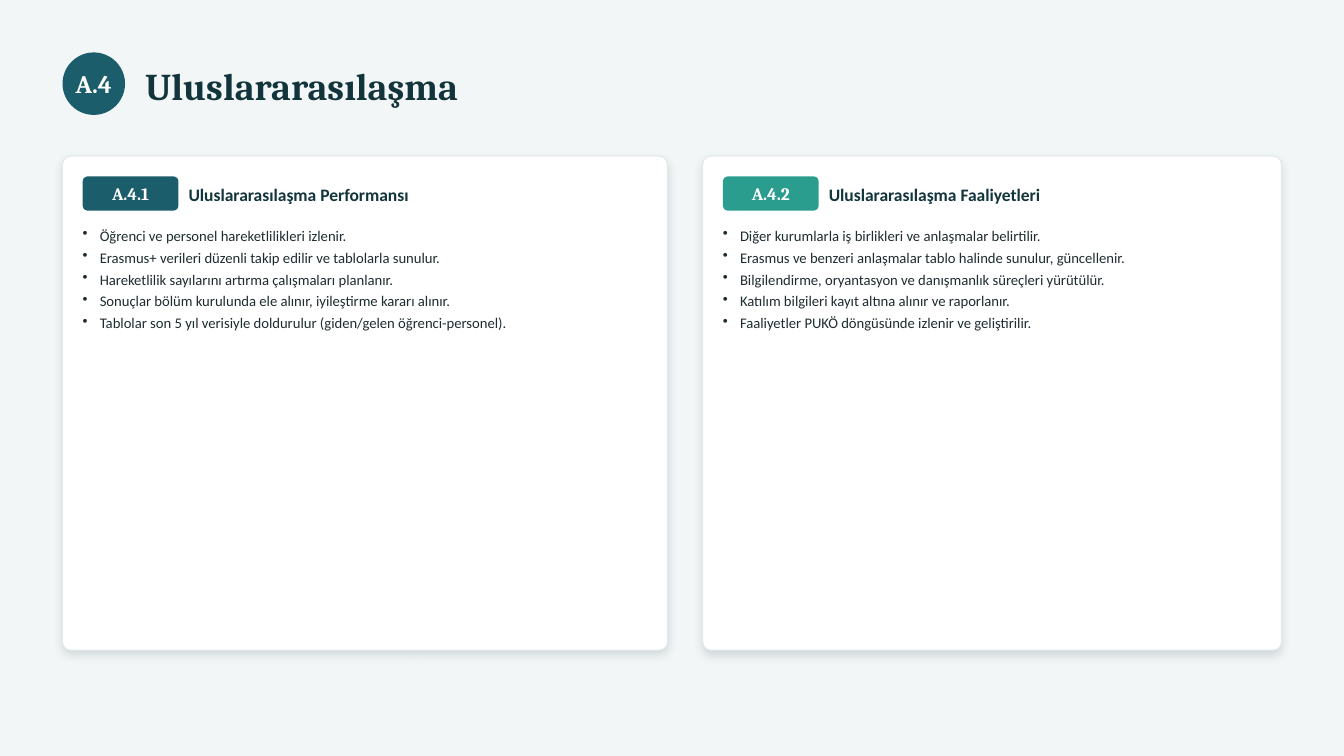
from lxml import etree
from pptx import Presentation
from pptx import util as u
from pptx.dml.color import RGBColor
from pptx.enum import shapes, text
from pptx.oxml.ns import qn

WIDE, HIGH = 13.33, 7.5
EDGE, GAP, PAD = 0.62, 0.35, 0.2
TEAL, MINT, DARK, INK = "1C5D6B", "2A9D8F", "12343B", "1F2C30"
SERIF, SANS = "Cambria", "Calibri"
FORM = shapes.MSO_SHAPE

CARDS = [
    (6, TEAL, "A.4.1", "Uluslararasılaşma Performansı", [
        "Öğrenci ve personel hareketlilikleri izlenir.",
        "Erasmus+ verileri düzenli takip edilir ve tablolarla sunulur.",
        "Hareketlilik sayılarını artırma çalışmaları planlanır.",
        "Sonuçlar bölüm kurulunda ele alınır, iyileştirme kararı alınır.",
        "Tablolar son 5 yıl verisiyle doldurulur (giden/gelen öğrenci-personel).",
    ]),
    (5.74, MINT, "A.4.2", "Uluslararasılaşma Faaliyetleri", [
        "Diğer kurumlarla iş birlikleri ve anlaşmalar belirtilir.",
        "Erasmus ve benzeri anlaşmalar tablo halinde sunulur, güncellenir.",
        "Bilgilendirme, oryantasyon ve danışmanlık süreçleri yürütülür.",
        "Katılım bilgileri kayıt altına alınır ve raporlanır.",
        "Faaliyetler PUKÖ döngüsünde izlenir ve geliştirilir.",
    ]),
]


def paint(fill, tone):
    fill.solid()
    fill.fore_color.rgb = RGBColor.from_string(tone)


def inches(box):
    return [u.Inches(side) for side in box]


def add_form(slide, kind, box, tone, curve=None):
    form = slide.shapes.add_shape(kind, *inches(box))
    form.shadow.inherit = False
    paint(form.fill, tone)
    form.line.fill.background()
    if curve is not None:
        form.adjustments[0] = curve
    return form


def add_shade(form):
    effects = form._element.spPr.find(qn("a:effectLst"))
    shade = etree.SubElement(
        effects, qn("a:outerShdw"), blurRad=str(u.Pt(7)), dist=str(u.Pt(3)),
        dir="5400000", algn="ctr", rotWithShape="0")
    tone = etree.SubElement(shade, qn("a:srgbClr"), val="0C2A30")
    etree.SubElement(tone, qn("a:alpha"), val="14000")


def set_frame(form, wrap=True, anchor=text.MSO_ANCHOR.MIDDLE):
    frame = form.text_frame
    frame.margin_left = frame.margin_right = 0
    frame.margin_top = frame.margin_bottom = 0
    frame.word_wrap = wrap
    frame.vertical_anchor = anchor
    return frame


def add_run(para, words, size, face, tone, bold=False):
    run = para.add_run()
    run.text = words
    run.font.size = u.Pt(size)
    run.font.name = face
    run.font.bold = bold
    paint(run.font.fill, tone)


def add_badge(slide, kind, box, tone, label, size, curve=None):
    form = add_form(slide, kind, box, tone, curve)
    para = set_frame(form, wrap=False).paragraphs[0]
    para.alignment = text.PP_ALIGN.CENTER
    add_run(para, label, size, SERIF, "FFFFFF", True)


def add_title(slide, box, words, size, face):
    area = slide.shapes.add_textbox(*inches(box))
    add_run(set_frame(area).paragraphs[0], words, size, face, DARK, True)


def add_list(slide, box, items):
    area = slide.shapes.add_textbox(*inches(box))
    frame = set_frame(area, anchor=text.MSO_ANCHOR.TOP)
    for index, item in enumerate(items):
        para = frame.add_paragraph() if index else frame.paragraphs[0]
        props = para._p.get_or_add_pPr()
        props.set("marL", str(u.Inches(0.17)))
        props.set("indent", str(-u.Inches(0.17)))
        etree.SubElement(props, qn("a:buChar"), char="•")
        para.space_after = u.Pt(3)
        add_run(para, item, 10.5, SANS, INK)


def add_header(slide, box):
    left, top, width, height = box
    add_badge(slide, FORM.OVAL, (left, top, height, height), TEAL, "A.4", 18)
    inset = height + PAD
    add_title(slide, (left + inset, top - 0.02, width - inset, 0.7),
              "Uluslararasılaşma", 27, SERIF)


def add_card(slide, box, tone, code, title, items):
    left, top, width, height = box
    card = add_form(slide, FORM.ROUNDED_RECTANGLE, box, "FFFFFF", 0.016)
    paint(card.line.fill, "E2E9EA")
    card.line.width = u.Pt(0.75)
    add_shade(card)
    x, y, inner = left + PAD, top + PAD, width - 2 * PAD
    tag = 0.95
    add_badge(slide, FORM.ROUNDED_RECTANGLE, (x, y, tag, 0.34), tone, code, 12.5, 0.147)
    inset = tag + PAD / 2
    add_title(slide, (x + inset, y - 0.02, inner - inset, 0.4), title, 12.5, SANS)
    add_list(slide, (x, y + 0.5, inner, height - 0.9), items)


def main():
    deck = Presentation()
    deck.slide_width, deck.slide_height = inches((WIDE, HIGH))
    slide = deck.slides.add_slide(deck.slide_layouts[6])
    paint(slide.background.fill, "F3F6F7")
    add_header(slide, (EDGE, 0.52, WIDE - 2 * EDGE, 0.62))
    left = EDGE
    for width, *parts in CARDS:
        add_card(slide, (left, 1.55, width, 4.9), *parts)
        left += width + GAP
    deck.save("out.pptx")


if __name__ == "__main__":
    main()
